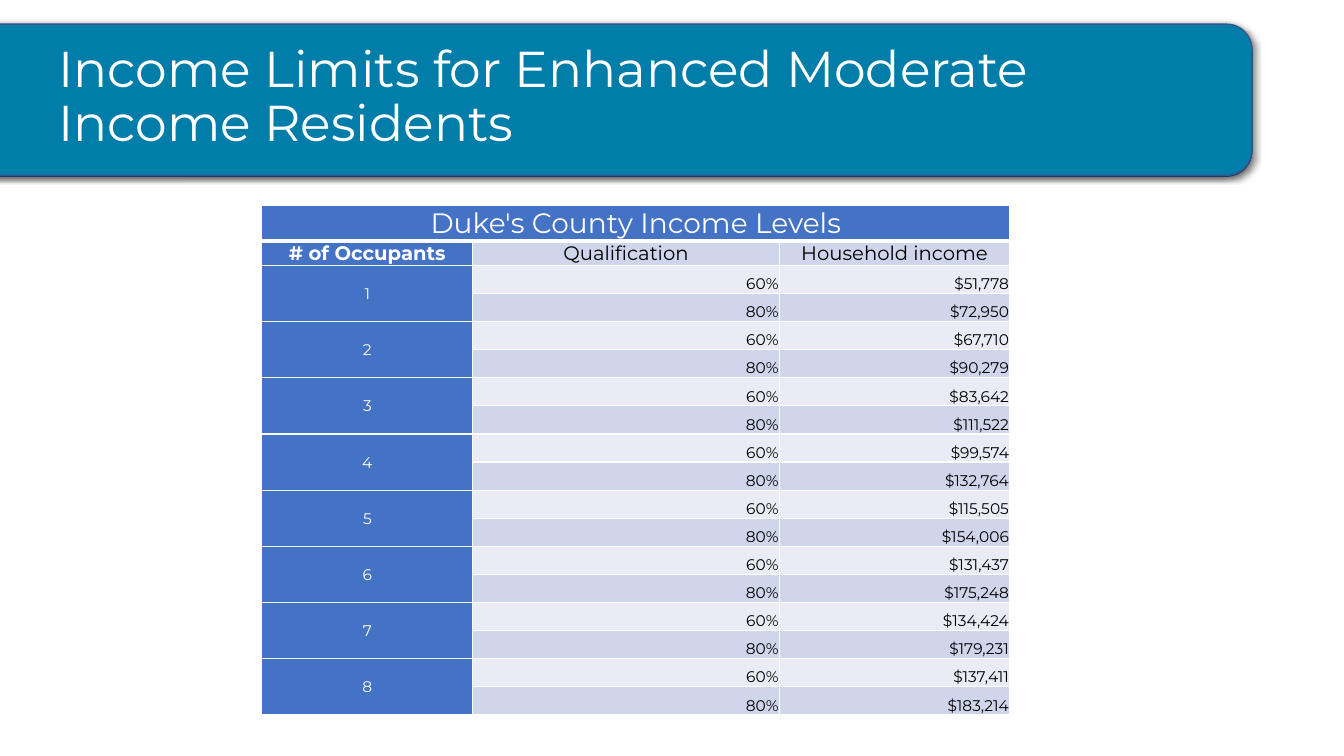
from lxml import etree
from pptx import Presentation
from pptx.dml.color import RGBColor
from pptx.enum.shapes import MSO_SHAPE
from pptx.enum.text import MSO_ANCHOR, PP_ALIGN
from pptx.oxml import parse_xml
from pptx.oxml.ns import qn
from pptx.util import Cm, Pt

ROUND = MSO_SHAPE.ROUNDED_RECTANGLE
LEFT, CENTER, RIGHT = PP_ALIGN.LEFT, PP_ALIGN.CENTER, PP_ALIGN.RIGHT
MIDDLE, BOTTOM = MSO_ANCHOR.MIDDLE, MSO_ANCHOR.BOTTOM
NS = "http://schemas.openxmlformats.org/drawingml/2006/main"
FONT = "Montserrat"
COLORS = {
    "white": "FFFFFF", "black": "000000", "teal": "007EA9", "edge": "325491",
    "blue": "4472C4", "pale": "E9EBF5", "mid": "CFD5EA",
}
HEADS = ["# of Occupants", "Qualification", "Household income"]
LEVELS = ["60%", "80%"]
INCOMES = [
    ("$51,778", "$72,950"), ("$67,710", "$90,279"),
    ("$83,642", "$111,522"), ("$99,574", "$132,764"),
    ("$115,505", "$154,006"), ("$131,437", "$175,248"),
    ("$134,424", "$179,231"), ("$137,411", "$183,214"),
]


def rgb(name):
    return RGBColor.from_string(COLORS[name])


def write(frame, text, size=11, color="black", bold=False, align=LEFT, space=1.0):
    para = frame.paragraphs[0]
    para.alignment = align
    para.line_spacing = space
    run = para.add_run()
    run.text = text
    font = run.font
    font.name, font.size, font.bold = FONT, Pt(size), bold
    font.color.rgb = rgb(color)


def cast(shape, angle):
    """Give the shape a soft outer shadow towards the angle in degrees."""
    shape.shadow.inherit = False
    effects = shape.element.spPr.find(qn("a:effectLst"))
    effects.append(parse_xml(
        f'<a:outerShdw xmlns:a="{NS}" blurRad="{Pt(4)}" dist="{Pt(3)}" '
        f'dir="{angle * 60000}" algn="ctr" rotWithShape="0">'
        f'<a:srgbClr val="{COLORS["black"]}"><a:alpha val="40000"/></a:srgbClr>'
        '</a:outerShdw>'))


def banner(slide, left, top, width, height):
    for drop, angle in ((0.02, 180), (0, 45)):
        bar = slide.shapes.add_shape(
            ROUND, Cm(left), Cm(top + drop), Cm(width), Cm(height))
        bar.fill.solid()
        bar.fill.fore_color.rgb = rgb("teal")
        bar.line.color.rgb = rgb("edge")
        bar.line.width = Pt(1)
        cast(bar, angle)

    title = slide.shapes.title
    slide.shapes.element.append(title.element)  # bring in front of the bars
    title.left, title.top = Cm(left + 2.11), Cm(top + 0.5)
    title.width, title.height = Cm(29.21), Cm(2.74)
    frame = title.text_frame
    frame.word_wrap = True
    frame.vertical_anchor = MIDDLE
    write(frame, "Income Limits for Enhanced Moderate Income Residents",
          size=36, color="white", space=0.9)


def border(cell, base=1):
    """Draw white cell edges, with the lower one base points wide."""
    props = cell._tc.get_or_add_tcPr()
    for side, width in (("L", 1), ("R", 1), ("T", 1), ("B", base)):
        line = etree.SubElement(props, qn(f"a:ln{side}"), w=str(Pt(width)))
        fill = etree.SubElement(line, qn("a:solidFill"))
        etree.SubElement(fill, qn("a:srgbClr"), val=COLORS["white"])


def fill_cell(cell, text, fill, anchor=BOTTOM, base=1, **form):
    border(cell, base)
    cell.fill.solid()
    cell.fill.fore_color.rgb = rgb(fill)
    cell.vertical_anchor = anchor
    cell.margin_left = cell.margin_right = cell.margin_top = Cm(0.02)
    cell.margin_bottom = 0
    write(cell.text_frame, text, **form)


def income_table(slide, left, top, width, height):
    count = 2 + len(INCOMES) * len(LEVELS)
    table = slide.shapes.add_table(
        count, len(HEADS), Cm(left), Cm(top), Cm(width), Cm(height)).table
    for col, part in zip(table.columns, (0.282, 0.41, 0.308)):
        col.width = Cm(width * part)
    tops = [0.87, 0.6]
    step = (height - sum(tops)) / (count - 2)
    for row, size in zip(table.rows, tops + [step] * (count - 2)):
        row.height = Cm(size)

    for col, head in enumerate(HEADS):
        name = "" if col else "Duke's County Income Levels"
        fill_cell(table.cell(0, col), name, "blue", base=3,
                  size=20, color="white", align=CENTER)
        fill_cell(table.cell(1, col), head, "mid" if col else "blue", size=14,
                  color="black" if col else "white", bold=not col, align=CENTER)
    table.cell(0, 0).merge(table.cell(0, len(HEADS) - 1))

    for group, pair in enumerate(INCOMES):
        first = 2 + group * len(LEVELS)
        for step, (level, income) in enumerate(zip(LEVELS, pair)):
            row = first + step
            shade = "mid" if step else "pale"
            fill_cell(table.cell(row, 0), "" if step else str(group + 1), "blue",
                      anchor=MIDDLE, color="white", align=CENTER)
            fill_cell(table.cell(row, 1), level, shade, align=RIGHT)
            fill_cell(table.cell(row, 2), income, shade, align=RIGHT)
        table.cell(first, 0).merge(table.cell(first + 1, 0))


def main():
    deck = Presentation()
    deck.slide_width, deck.slide_height = Cm(33.87), Cm(19.05)
    slide = deck.slides.add_slide(deck.slide_layouts[5])
    banner(slide, -0.89, 0.61, 32.44, 3.81)
    income_table(slide, 6.6, 5.18, 18.85, 12.8)
    deck.save("out.pptx")


if __name__ == "__main__":
    main()
